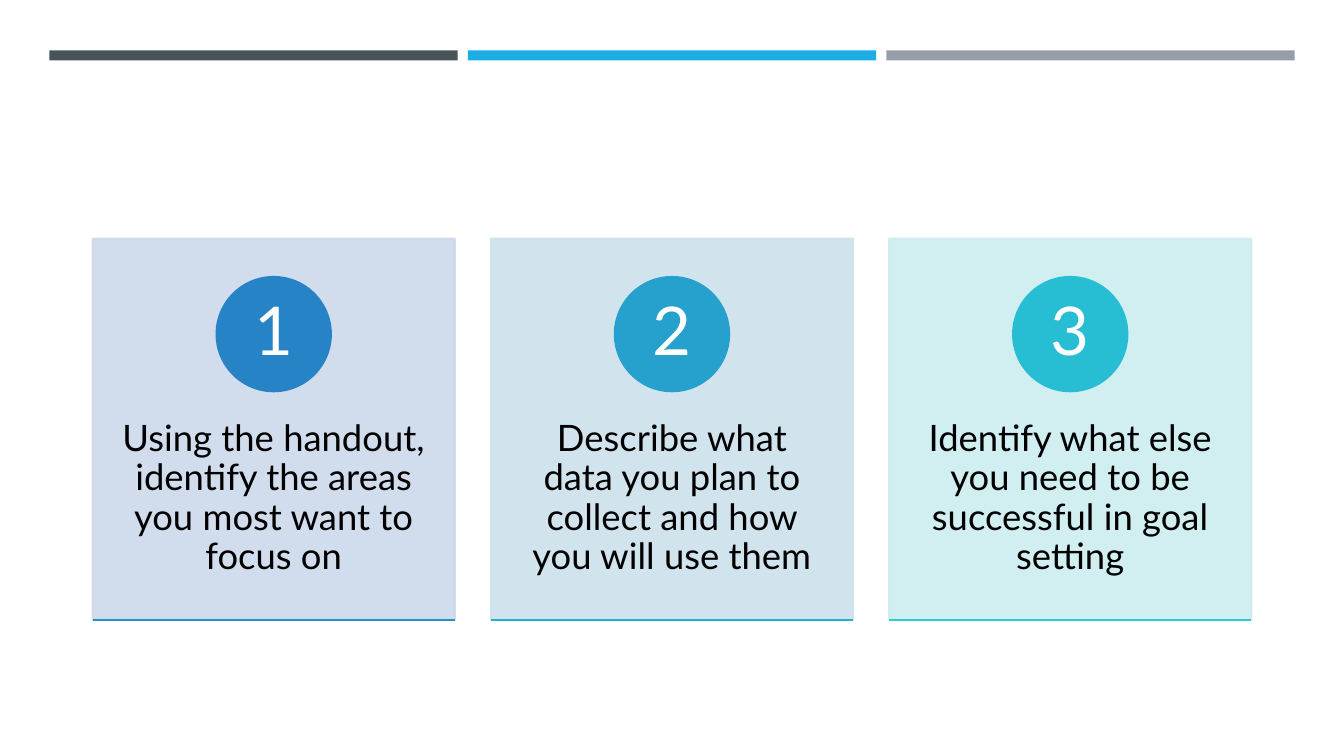
from dataclasses import dataclass

from lxml import etree
from pptx import Presentation
from pptx.dml.color import RGBColor
from pptx.enum.shapes import MSO_CONNECTOR, MSO_SHAPE
from pptx.enum.text import MSO_ANCHOR, PP_ALIGN
from pptx.oxml.ns import qn
from pptx.util import Inches, Pt

RECTANGLE = MSO_SHAPE.RECTANGLE
OVAL = MSO_SHAPE.OVAL
STRAIGHT = MSO_CONNECTOR.STRAIGHT
CENTER = PP_ALIGN.CENTER
TOP = MSO_ANCHOR.TOP
MIDDLE = MSO_ANCHOR.MIDDLE

SLIDE_WIDTH, SLIDE_HEIGHT = 13.33, 7.5
BAR_LEFT, BAR_TOP, BAR_PITCH = 0.49, 0.5, 4.15
BAR_WIDTH, BAR_HEIGHT = 4.05, 0.1
CARD_LEFT, CARD_TOP, CARD_PITCH = 0.92, 2.37, 3.95
CARD_WIDTH, CARD_HEIGHT = 3.59, 3.78
CIRCLE_DROP, CIRCLE_SIZE = 0.38, 1.13
TEXT_DROP, TEXT_HEIGHT = 1.44, 2.27
LINE_WIDTH = 1.75
CARD_OPACITY = 90

BAR_COLORS = ("465359", "1CADE4", "969FA7")


@dataclass(frozen=True)
class Card:
    text: str
    fill: str
    circle: str
    rule: str


@dataclass(frozen=True)
class TextStyle:
    size: int
    color: str
    anchor: MSO_ANCHOR
    side_inset: float
    end_inset: float


CARDS = (
    Card("Using the handout, identify the areas you most want to focus on",
         "CDD9EA", "2683C6", "2691C9"),
    Card("Describe what data you plan to collect and how you will use them",
         "CDE2ED", "26A0CD", "27AFD0"),
    Card("Identify what else you need to be successful in goal setting",
         "CDEDF0", "27BED4", "27CED7"),
)
BODY = TextStyle(26, "000000", TOP, 0.28, 0.36)
NUMBER = TextStyle(48, "FFFFFF", MIDDLE, 0.09, 0.01)


def paint(target, color: str) -> None:
    target.fore_color.rgb = RGBColor.from_string(color)


def set_values(target, values: dict) -> None:
    for name, value in values.items():
        setattr(target, name, value)


def set_opacity(shape, percent: int) -> None:
    for color in shape._element.spPr.iter(qn("a:srgbClr")):
        etree.SubElement(color, qn("a:alpha"), val=str(percent * 1000))


def add_box(page, kind, left: float, top: float, width: float, height: float,
            color: str, outlined: bool = True):
    box = page.shapes.add_shape(
        kind, Inches(left), Inches(top), Inches(width), Inches(height))
    box.shadow.inherit = False
    box.fill.solid()
    paint(box.fill, color)
    box.line.fill.background()
    if outlined:
        box.line.fill.solid()
        paint(box.line.fill, color)
        box.line.width = Pt(LINE_WIDTH)
    return box


def write(box, text: str, style: TextStyle) -> None:
    frame = box.text_frame
    set_values(frame, {
        "word_wrap": True,
        "vertical_anchor": style.anchor,
        "margin_left": Inches(style.side_inset),
        "margin_right": Inches(style.side_inset),
        "margin_top": Inches(style.end_inset),
        "margin_bottom": Inches(style.end_inset),
    })
    para = frame.paragraphs[0]
    set_values(para, {"alignment": CENTER, "line_spacing": 0.9})
    span = para.add_run()
    span.text = text
    set_values(span.font, {"name": "Lato", "size": Pt(style.size)})
    span.font.color.rgb = RGBColor.from_string(style.color)


def add_rule(page, left: float, top: float, width: float, color: str) -> None:
    rule = page.shapes.add_connector(
        STRAIGHT, Inches(left), Inches(top), Inches(left + width), Inches(top))
    rule.line.fill.solid()
    paint(rule.line.fill, color)
    rule.line.width = Pt(LINE_WIDTH)
    etree.SubElement(rule._element.spPr, qn("a:effectLst"))


def add_card(page, column: int, card: Card) -> None:
    left = CARD_LEFT + column * CARD_PITCH
    panel = add_box(page, RECTANGLE, left, CARD_TOP, CARD_WIDTH, CARD_HEIGHT, card.fill)
    set_opacity(panel, CARD_OPACITY)
    body = page.shapes.add_textbox(
        Inches(left), Inches(CARD_TOP + TEXT_DROP), Inches(CARD_WIDTH), Inches(TEXT_HEIGHT))
    write(body, card.text, BODY)
    circle = add_box(page, OVAL, left + (CARD_WIDTH - CIRCLE_SIZE) / 2,
                     CARD_TOP + CIRCLE_DROP, CIRCLE_SIZE, CIRCLE_SIZE, card.circle)
    write(circle, str(column + 1), NUMBER)
    add_rule(page, left, CARD_TOP + CARD_HEIGHT, CARD_WIDTH, card.rule)


def main() -> None:
    deck = Presentation()
    set_values(deck, {"slide_width": Inches(SLIDE_WIDTH), "slide_height": Inches(SLIDE_HEIGHT)})
    page = deck.slides.add_slide(deck.slide_layouts[6])
    for column, color in enumerate(BAR_COLORS):
        add_box(page, RECTANGLE, BAR_LEFT + column * BAR_PITCH, BAR_TOP,
                BAR_WIDTH, BAR_HEIGHT, color, outlined=False)
    for column, card in enumerate(CARDS):
        add_card(page, column, card)
    deck.save("out.pptx")


if __name__ == "__main__":
    main()
